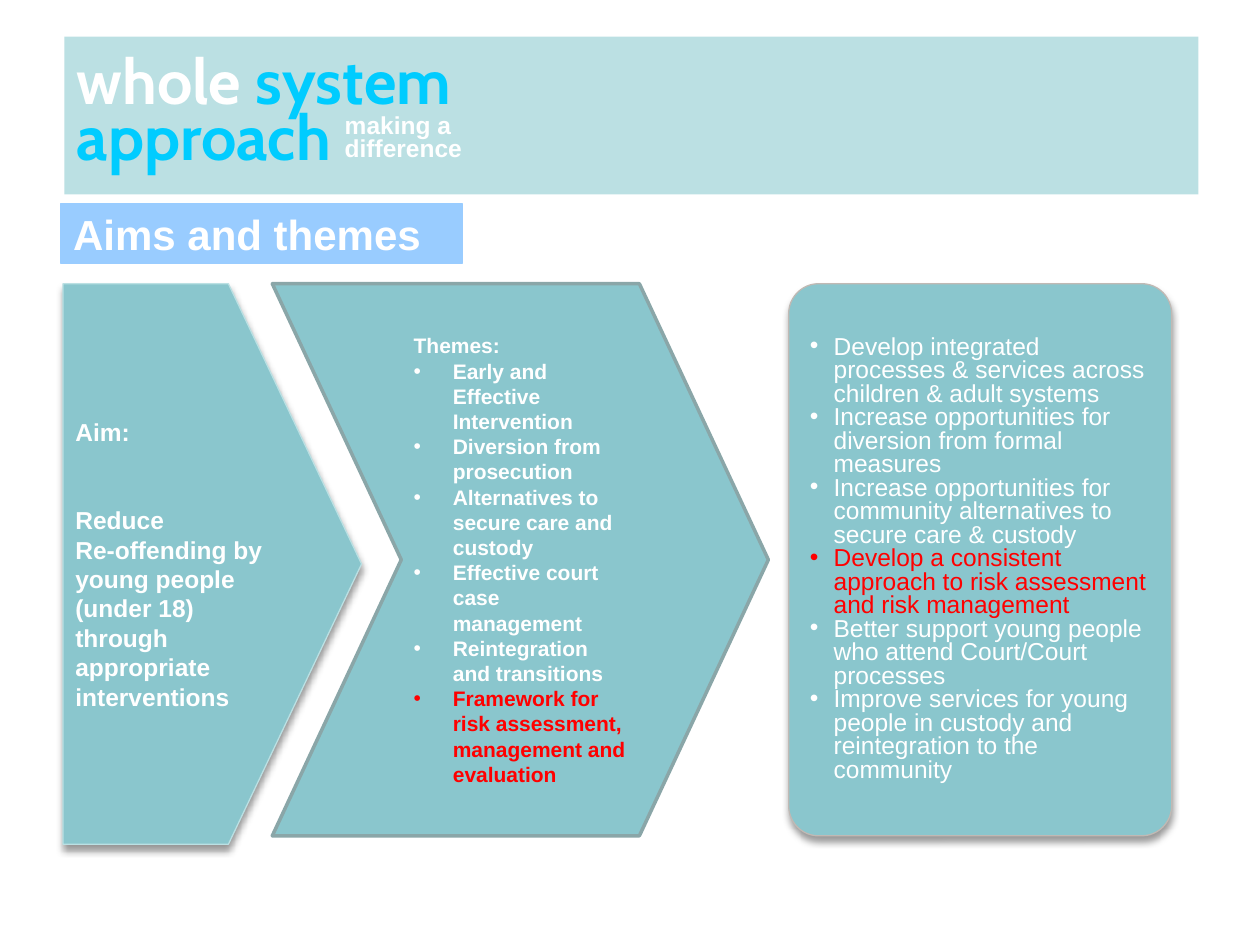
from dataclasses import dataclass

from lxml.etree import SubElement
from pptx import Presentation
from pptx.dml.color import RGBColor
from pptx.enum.shapes import MSO_SHAPE
from pptx.enum.text import MSO_ANCHOR, MSO_AUTO_SIZE, PP_ALIGN
from pptx.oxml import parse_xml
from pptx.oxml.ns import nsdecls, qn
from pptx.util import Cm, Pt


@dataclass(frozen=True)
class Theme:
    font: str = "Arial"
    brand_font: str = "Cabin"
    white: str = "FFFFFF"
    bright: str = "00CCFF"
    alert: str = "FF0000"
    banner: str = "BBE0E3"
    panel: str = "8AC6CD"
    heading: str = "99CCFF"
    chevron_edge: str = "8AA6A8"
    card_edge: str = "C0B9B4"
    brand_size: int = 36
    heading_size: int = 24
    text_size: int = 14
    theme_size: int = 12


THEME = Theme()

THEMES = [
    "Early and Effective Intervention",
    "Diversion from prosecution",
    "Alternatives to secure care and custody",
    "Effective court case management",
    "Reintegration and transitions",
]
KEY_THEME = "Framework for risk assessment, management and evaluation"

OUTCOMES = [
    "Develop integrated processes & services across children & adult systems",
    "Increase opportunities for diversion from formal measures",
    "Increase opportunities for community alternatives to secure care & custody",
    "Develop a consistent approach to risk assessment and risk management",
    "Better support young people who attend Court/Court processes",
    "Improve services for young people in custody and reintegration to the community",
]
KEY_OUTCOME = OUTCOMES[3]


def set_values(target, values):
    for name, value in values.items():
        setattr(target, name, value)


def paint(shape, fill, edge=None, width=0.75):
    shape.fill.solid()
    shape.fill.fore_color.rgb = RGBColor.from_string(fill)
    if edge:
        shape.line.color.rgb = RGBColor.from_string(edge)
        shape.line.width = Pt(width)
    else:
        shape.line.fill.background()


def add_panel(page, kind, bounds, fill, edge=None, width=0.75, bend=None):
    shape = page.shapes.add_shape(kind, *map(Cm, bounds))
    shape.shadow.inherit = False
    paint(shape, fill, edge, width)
    if bend is not None:
        shape.adjustments[0] = bend
    return shape


def add_drop_shadow(shape):
    effects = shape._element.spPr.find(qn("a:effectLst"))
    shadow = SubElement(effects, qn("a:outerShdw"), blurRad=str(Pt(4)),
                        dist=str(Pt(3)), dir="5400000", rotWithShape="0")
    color = SubElement(shadow, qn("a:srgbClr"), val="000000")
    SubElement(color, qn("a:alpha"), val="40000")


def set_frame(shape, anchor=MSO_ANCHOR.MIDDLE, inset=None):
    frame = shape.text_frame
    set_values(frame, {"word_wrap": True, "vertical_anchor": anchor,
                       "auto_size": MSO_AUTO_SIZE.NONE})
    if inset is not None:
        sides = ("left", "top", "right", "bottom")
        set_values(frame, {f"margin_{side}": Cm(inset) for side in sides})
    return frame


def add_bullet(para, indent):
    properties = para._p.get_or_add_pPr()
    properties.set("marL", str(Cm(indent)))
    properties.set("indent", str(-Cm(indent)))
    SubElement(properties, qn("a:buFont"), typeface=THEME.font)
    SubElement(properties, qn("a:buChar"), char="•")


def add_para(frame, spans, size, font=THEME.font, bold=True, indent=None, **spacing):
    para = frame.paragraphs[0]
    if para.runs:
        para = frame.add_paragraph()
    set_values(para, {"alignment": PP_ALIGN.LEFT, **spacing})
    if indent:
        add_bullet(para, indent)
    for text, color in spans:
        for index, line in enumerate(text.split("\n")):
            if index:
                para.add_line_break()
            span = para.add_run()
            span.text = line
            set_values(span.font, {"name": font, "size": Pt(size), "bold": bold})
            span.font.color.rgb = RGBColor.from_string(color)


def add_banner(page):
    box = add_panel(page, MSO_SHAPE.RECTANGLE, (1.3, 0.74, 22.86, 3.18), THEME.banner)
    spans = [("whole ", THEME.white), ("system\napproach", THEME.bright)]
    add_para(set_frame(box), spans, THEME.brand_size, THEME.brand_font, line_spacing=0.75)
    tagline = add_panel(page, MSO_SHAPE.RECTANGLE, (6.7, 2.31, 4.2, 1), THEME.banner)
    frame = set_frame(tagline, MSO_ANCHOR.TOP)
    for text in ("making a", "difference"):
        add_para(frame, [(text, THEME.white)], THEME.text_size,
                 line_spacing=0.6, space_before=Pt(2.8))


def format_title(page):
    title = page.shapes.title
    bounds = map(Cm, (1.22, 4.11, 8.1, 1.19))
    set_values(title, dict(zip(("left", "top", "width", "height"), bounds)))
    outline = parse_xml(f'<a:prstGeom {nsdecls("a")} prst="flowChartAlternateProcess">'
                        '<a:avLst/></a:prstGeom>')
    title._element.spPr.find(qn("a:xfrm")).addnext(outline)
    paint(title, THEME.heading, THEME.heading)
    add_para(set_frame(title), [("Aims and themes", THEME.white)], THEME.heading_size)


def add_aim(page):
    box = add_panel(page, MSO_SHAPE.PENTAGON, (1.27, 5.72, 6.02, 11.3),
                    THEME.panel, THEME.banner, bend=0.446)
    add_drop_shadow(box)
    frame = set_frame(box, inset=0.25)
    add_para(frame, [("Aim:", THEME.white)], THEME.text_size)
    aim = "Reduce\nRe-offending by young people (under 18) through appropriate interventions"
    add_para(frame, [(aim, THEME.white)], THEME.text_size, space_before=Pt(33.6))


def add_themes(page):
    box = add_panel(page, MSO_SHAPE.CHEVRON, (5.49, 5.72, 10, 11.13),
                    THEME.panel, THEME.chevron_edge, 2, 0.26)
    frame = set_frame(box)
    add_para(frame, [("Themes:", THEME.white)], THEME.theme_size)
    for text in THEMES + [KEY_THEME]:
        color = THEME.alert if text == KEY_THEME else THEME.white
        add_para(frame, [(text, color)], THEME.theme_size, indent=0.79)


def add_outcomes(page):
    box = add_panel(page, MSO_SHAPE.ROUNDED_RECTANGLE, (15.9, 5.72, 7.72, 11.13),
                    THEME.panel, THEME.card_edge, bend=0.078)
    add_drop_shadow(box)
    frame = set_frame(box, inset=0.25)
    for text in OUTCOMES:
        color = THEME.alert if text == KEY_OUTCOME else THEME.white
        add_para(frame, [(text, color)], THEME.text_size, bold=False,
                 indent=0.48, line_spacing=0.8)


def main():
    deck = Presentation()
    set_values(deck, {"slide_width": Cm(25.4), "slide_height": Cm(19.05)})
    page = deck.slides.add_slide(deck.slide_layouts[5])
    add_banner(page)
    format_title(page)
    add_aim(page)
    add_themes(page)
    add_outcomes(page)
    deck.save("out.pptx")


if __name__ == "__main__":
    main()
